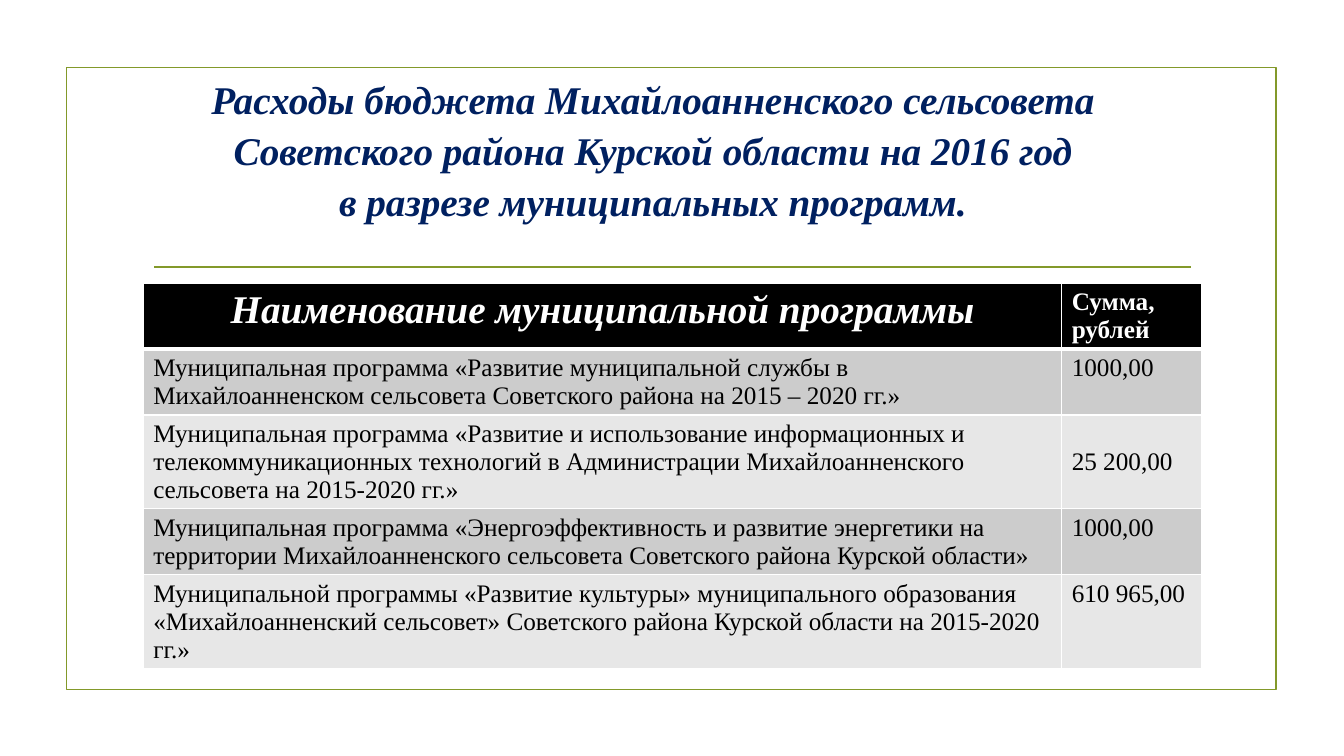
import pptx
import pptx.util
import pptx.dml.color
import pptx.enum.shapes
import pptx.enum.text
import pptx.oxml
import pptx.oxml.ns

Inches, Pt = pptx.util.Inches, pptx.util.Pt
RGBColor = pptx.dml.color.RGBColor
ALIGN = pptx.enum.text.PP_ALIGN
ANCHOR = pptx.enum.text.MSO_ANCHOR

OLIVE = RGBColor(0x83, 0x99, 0x2A)
NAVY = RGBColor(0x00, 0x20, 0x60)
BLACK = RGBColor(0x00, 0x00, 0x00)
WHITE = RGBColor(0xFF, 0xFF, 0xFF)
DARK = RGBColor(0xCC, 0xCC, 0xCC)
LIGHT = RGBColor(0xE7, 0xE7, 0xE7)
FACE = "Times New Roman"


def style(frame, color, align, **form):
    """Format every paragraph of a text frame."""
    for para in frame.paragraphs:
        para.alignment = align
        para.font.color.rgb = color
        for key, value in {"name": FACE, **form}.items():
            setattr(para.font, key, value)


def edge(cell, side, width):
    """Add a white border to one side of a cell."""
    line = pptx.oxml.parse_xml(
        f'<a:ln{side} {pptx.oxml.ns.nsdecls("a")} w="{Pt(width)}">'
        f'<a:solidFill><a:srgbClr val="{WHITE}"/></a:solidFill></a:ln{side}>')
    cell._tc.get_or_add_tcPr().append(line)


deck = pptx.Presentation()
deck.slide_width, deck.slide_height = Inches(13.33), Inches(7.5)
slide = deck.slides.add_slide(deck.slide_layouts[5])
shapes = slide.shapes

# Frame
frame = shapes.add_shape(pptx.enum.shapes.MSO_SHAPE.RECTANGLE,
                         Inches(0.66), Inches(0.67), Inches(12), Inches(6.17))
frame.shadow.inherit = False
frame.fill.background()

# Rule under the title
rule = shapes.add_connector(pptx.enum.shapes.MSO_CONNECTOR.STRAIGHT,
                            Inches(1.53), Inches(2.65), Inches(11.81), Inches(2.65))
rule._element.spPr.append(
    pptx.oxml.parse_xml(f'<a:effectLst {pptx.oxml.ns.nsdecls("a")}/>'))
for item in (frame, rule):
    item.line.color.rgb = OLIVE
    item.line.width = Pt(1.25)

# Title
title = shapes.title
title.left, title.top = Inches(1.03), Inches(0.9)
title.width, title.height = Inches(10.89), Inches(1.6)
text = title.text_frame
text.text = ("Расходы бюджета Михайлоанненского сельсовета\v"
             "Советского района Курской области на 2016 год\v"
             "в разрезе муниципальных программ.")
text.word_wrap = True
text.auto_size = pptx.enum.text.MSO_AUTO_SIZE.NONE
text.vertical_anchor = ANCHOR.MIDDLE
text.margin_bottom = Inches(0.51)
text.paragraphs[0].line_spacing = 1.08
style(text, NAVY, ALIGN.CENTER, size=Pt(28), bold=True, italic=True)

# Table of programmes
rows = [
    ("Наименование муниципальной программы", "Сумма,\nрублей", 0.65),
    ("Муниципальная программа «Развитие муниципальной службы в "
     "Михайлоанненском сельсовета Советского района на 2015 – 2020 гг.»",
     "1000,00", 0.65),
    ("Муниципальная программа «Развитие и использование информационных и "
     "телекоммуникационных технологий в Администрации Михайлоанненского "
     "сельсовета на 2015-2020 гг.»", "25 200,00", 0.93),
    ("Муниципальная программа «Энергоэффективность и развитие энергетики на "
     "территории Михайлоанненского сельсовета Советского района Курской области»",
     "1000,00", 0.65),
    ("Муниципальной программы «Развитие культуры» муниципального образования "
     "«Михайлоанненский сельсовет» Советского района Курской области на "
     "2015-2020 гг.»", "610 965,00", 0.93),
]
table = shapes.add_table(len(rows), 2, Inches(1.42), Inches(2.81),
                         Inches(10.5), Inches(3.81)).table
for col, width in zip(table.columns, (9.11, 1.39)):
    col.width = Inches(width)

for r, (name, total, height) in enumerate(rows):
    table.rows[r].height = Inches(height)
    head = r == 0
    for c, words in enumerate((name, total)):
        cell = table.cell(r, c)
        cell.text = words
        for side in "LRTB":
            thick = (head and side == "B") or (r == 1 and side == "T")
            edge(cell, side, 3 if thick else 1)
        cell.fill.solid()
        cell.fill.fore_color.rgb = BLACK if head else DARK if r % 2 else LIGHT
        main = head and c == 0
        style(cell.text_frame, WHITE if head else BLACK,
              ALIGN.CENTER if main else ALIGN.LEFT,
              size=Pt(28 if main else 18), bold=head, italic=main)
table.cell(2, 1).vertical_anchor = ANCHOR.MIDDLE

deck.save("out.pptx")
